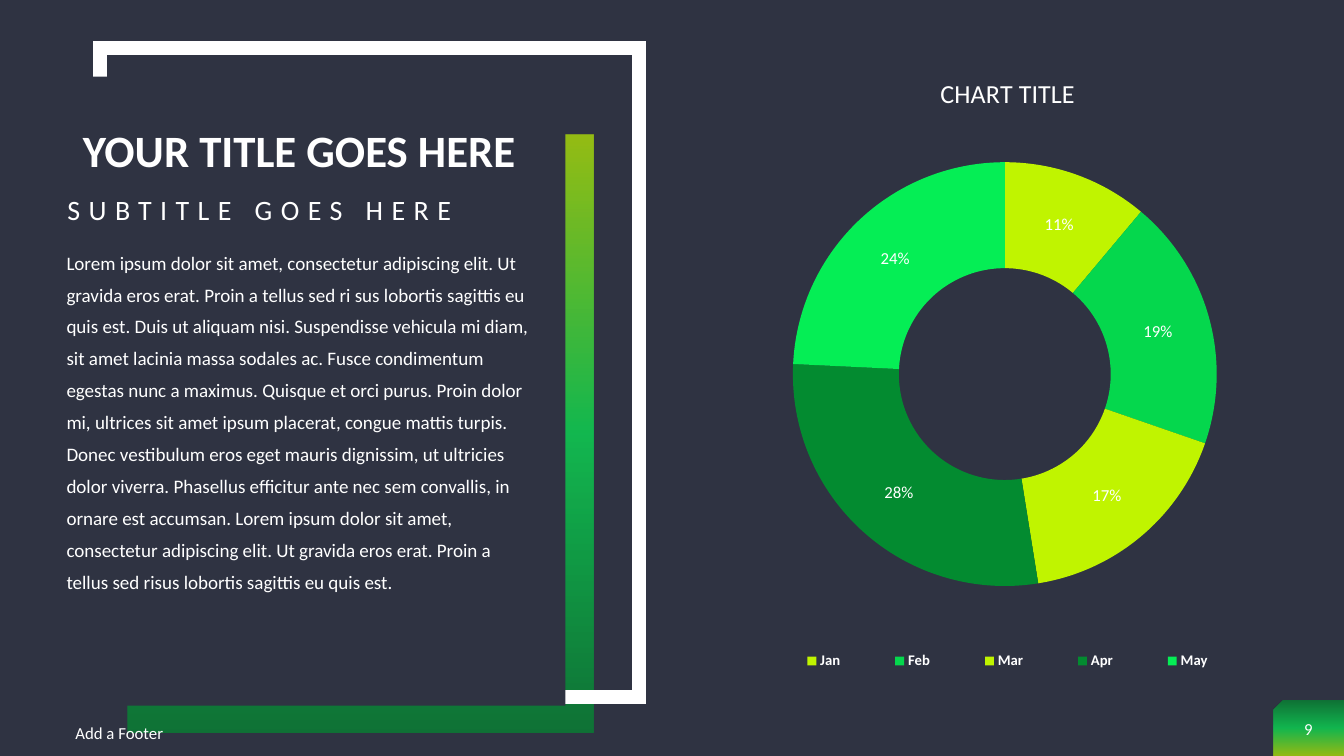
from dataclasses import dataclass
from typing import Any, NamedTuple, Optional

from lxml import etree
from pptx import Presentation
from pptx.chart.data import CategoryChartData
from pptx.dml.color import RGBColor
from pptx.enum import chart as charts, shapes, text
from pptx.oxml import parse_xml
from pptx.oxml.ns import nsdecls, qn
from pptx.util import Pt


@dataclass(frozen=True)
class Theme:
    font: str = "Calibri"
    background: str = "2F3342"
    white: str = "FFFFFF"
    forest: str = "038B30"
    green: str = "05D74D"
    mint: str = "05EE55"
    lime: str = "C0F400"
    gradient_opacity: int = 70
    title: float = 32
    subtitle: float = 20
    body: float = 13.6
    small: float = 12
    chart_title: float = 18.6
    legend: float = 10.5


THEME = Theme()


class Box(NamedTuple):
    left: float
    top: float
    width: float
    height: float

    def lengths(self) -> tuple:
        return tuple(Pt(value) for value in self)


@dataclass(frozen=True)
class Panel:
    box: Box
    shape: Any = shapes.MSO_SHAPE.RECTANGLE
    fill: Optional[str] = None
    gradient_angle: Optional[int] = None
    border: float = 0
    flipped: bool = False


@dataclass(frozen=True)
class Passage:
    box: Box
    words: str
    size: float
    bold: bool = False
    align: Any = text.PP_ALIGN.LEFT
    anchor: Any = text.MSO_ANCHOR.MIDDLE
    line_spacing: float = 1.0
    side_inset: float = 7.2
    letter_spacing: float = 0


class Month(NamedTuple):
    name: str
    value: int
    color: str


PANELS = [
    Panel(Box(909.4, 500.4, 50.6, 39.6), shapes.MSO_SHAPE.SNIP_1_RECTANGLE,
          gradient_angle=90, flipped=True),
    Panel(Box(91.4, 96.5, 332.6, 427), gradient_angle=270),
    Panel(Box(71.3, 34.6, 385.2, 463), border=10),
    Panel(Box(51.8, 54.7, 352.1, 449.3), fill=THEME.background),
]

TITLE = Passage(Box(47.5, 86.4, 332.6, 45.4), "YOUR TITLE GOES HERE", THEME.title, bold=True,
                align=text.PP_ALIGN.CENTER, line_spacing=0.9, side_inset=0)

LOREM = (
    "Lorem ipsum dolor sit amet, consectetur adipiscing elit. Ut gravida eros erat. "
    "Proin a tellus sed ri sus lobortis sagittis eu quis est. Duis ut aliquam nisi. "
    "Suspendisse vehicula mi diam, sit amet lacinia massa sodales ac. Fusce condimentum "
    "egestas nunc a maximus. Quisque et orci purus. Proin dolor mi, ultrices sit amet ipsum "
    "placerat, congue mattis turpis. Donec vestibulum eros eget mauris dignissim, ut ultricies "
    "dolor viverra. Phasellus efficitur ante nec sem convallis, in ornare est accumsan. "
    "Lorem ipsum dolor sit amet, consectetur adipiscing elit. Ut gravida eros erat. "
    "Proin a tellus sed risus lobortis sagittis eu quis est."
)

PASSAGES = [
    Passage(Box(48.2, 136.8, 330.5, 32.4), "SUBTITLE GOES HERE", THEME.subtitle,
            anchor=text.MSO_ANCHOR.TOP, line_spacing=0.9, side_inset=0, letter_spacing=6),
    Passage(Box(47.5, 169.2, 332.6, 303.8), LOREM, THEME.body,
            anchor=text.MSO_ANCHOR.TOP, line_spacing=1.4, side_inset=0),
    Passage(Box(46.8, 509, 324, 28.8), "Add a Footer", THEME.small),
    Passage(Box(909.4, 504.7, 50.4, 32.4), "9", THEME.small, align=text.PP_ALIGN.CENTER),
]

CHART_BOX = Box(504, 36.7, 411.1, 465.8)
MONTHS = [
    Month("Jan", 11, THEME.lime),
    Month("Feb", 19, THEME.green),
    Month("Mar", 17, THEME.lime),
    Month("Apr", 28, THEME.forest),
    Month("May", 24, THEME.mint),
]


def assign(target: Any, values: dict) -> None:
    for name, value in values.items():
        setattr(target, name, value)


def style_font(font: Any, size: float, bold: bool = False) -> None:
    assign(font, {"name": THEME.font, "size": Pt(size), "bold": bold})
    font.color.rgb = RGBColor.from_string(THEME.white)


def gradient_fill(angle: int) -> Any:
    stops = "".join(
        f'<a:gs pos="{position * 1000}"><a:srgbClr val="{color}">'
        f'<a:alpha val="{THEME.gradient_opacity * 1000}"/></a:srgbClr></a:gs>'
        for position, color in ((0, THEME.forest), (50, THEME.mint), (100, THEME.lime))
    )
    return parse_xml(f'<a:gradFill {nsdecls("a")} rotWithShape="1"><a:gsLst>{stops}</a:gsLst>'
                     f'<a:lin ang="{angle * 60000}" scaled="0"/></a:gradFill>')


def draw_panel(slide: Any, panel: Panel) -> None:
    shape = slide.shapes.add_shape(panel.shape, *panel.box.lengths())
    shape.shadow.inherit = False
    properties = shape.element.spPr
    if panel.gradient_angle is not None:
        properties.find(qn("a:prstGeom")).addnext(gradient_fill(panel.gradient_angle))
    elif panel.fill:
        shape.fill.solid()
        shape.fill.fore_color.rgb = RGBColor.from_string(panel.fill)
    else:
        shape.fill.background()
    if panel.border:
        shape.line.color.rgb = RGBColor.from_string(THEME.white)
        shape.line.width = Pt(panel.border)
        etree.SubElement(properties.find(qn("a:ln")), qn("a:miter"), lim="800000")
    else:
        shape.line.fill.background()
    if panel.flipped:
        properties.find(qn("a:xfrm")).set("flipH", "1")


def write_passage(shape: Any, passage: Passage) -> None:
    assign(shape, dict(zip(("left", "top", "width", "height"), passage.box.lengths())))
    frame = shape.text_frame
    assign(frame, {
        "text": passage.words, "word_wrap": True, "auto_size": text.MSO_AUTO_SIZE.NONE,
        "vertical_anchor": passage.anchor,
        "margin_left": Pt(passage.side_inset), "margin_right": Pt(passage.side_inset),
        "margin_top": Pt(3.6), "margin_bottom": Pt(3.6),
    })
    paragraph = frame.paragraphs[0]
    assign(paragraph, {"alignment": passage.align, "line_spacing": passage.line_spacing})
    style_font(paragraph.runs[0].font, passage.size, passage.bold)
    if passage.letter_spacing:
        shape.element.find(".//" + qn("a:rPr")).set("spc", str(passage.letter_spacing * 100))


def place_in_chart(part: Any, **fractions: float) -> None:
    """Give a chart part a manual layout in fractions of the chart area."""
    for old in part.findall(qn("c:layout")):
        part.remove(old)
    target = '<c:layoutTarget val="inner"/>' if part.tag == qn("c:plotArea") else ""
    modes = '<c:xMode val="edge"/><c:yMode val="edge"/>'
    values = "".join(f'<c:{key} val="{value}"/>' for key, value in fractions.items())
    layout = parse_xml(f'<c:layout {nsdecls("c")}><c:manualLayout>{target}{modes}{values}'
                       "</c:manualLayout></c:layout>")
    overlay = part.find(qn("c:overlay"))
    if overlay is None:
        part.insert(0, layout)
    else:
        overlay.addprevious(layout)


def draw_doughnut(slide: Any) -> None:
    data = CategoryChartData()
    data.categories = [month.name for month in MONTHS]
    data.add_series("Series 1", [month.value for month in MONTHS])
    chart = slide.shapes.add_chart(charts.XL_CHART_TYPE.DOUGHNUT, *CHART_BOX.lengths(), data).chart
    style_font(chart.font, THEME.small)

    heading = chart.chart_title.text_frame
    heading.text = "CHART TITLE"
    style_font(heading.paragraphs[0].runs[0].font, THEME.chart_title)

    chart.has_legend = True
    assign(chart.legend, {"position": charts.XL_LEGEND_POSITION.BOTTOM, "include_in_layout": False})
    style_font(chart.legend.font, THEME.legend, bold=True)

    plot = chart.plots[0]
    assign(plot, {"vary_by_categories": True, "has_data_labels": True})
    assign(plot.data_labels, {"show_percentage": True, "show_value": False,
                              "number_format": "0%", "number_format_is_linked": False})
    style_font(plot.data_labels.font, THEME.small)
    for index, month in enumerate(MONTHS):
        wedge = plot.series[0].points[index].format
        wedge.fill.solid()
        wedge.fill.fore_color.rgb = RGBColor.from_string(month.color)
        wedge.line.fill.background()

    root = chart.element
    root.find(".//" + qn("c:holeSize")).set("val", "70")
    place_in_chart(root.find(".//" + qn("c:title")), x=0.4, y=0.03)
    place_in_chart(root.find(".//" + qn("c:plotArea")), x=0.15, y=0.17, w=0.74, h=0.65)
    place_in_chart(root.find(".//" + qn("c:legend")), x=0.09, y=0.91, w=0.87, h=0.05)


def main() -> None:
    deck = Presentation()
    assign(deck, {"slide_width": Pt(960), "slide_height": Pt(540)})
    slide = deck.slides.add_slide(deck.slide_layouts[5])
    slide.background.fill.solid()
    slide.background.fill.fore_color.rgb = RGBColor.from_string(THEME.background)
    for panel in PANELS:
        draw_panel(slide, panel)
    title = slide.shapes.title
    slide.shapes.element.append(title.element)
    write_passage(title, TITLE)
    for passage in PASSAGES:
        write_passage(slide.shapes.add_textbox(*passage.box.lengths()), passage)
    draw_doughnut(slide)
    deck.save("out.pptx")


if __name__ == "__main__":
    main()
